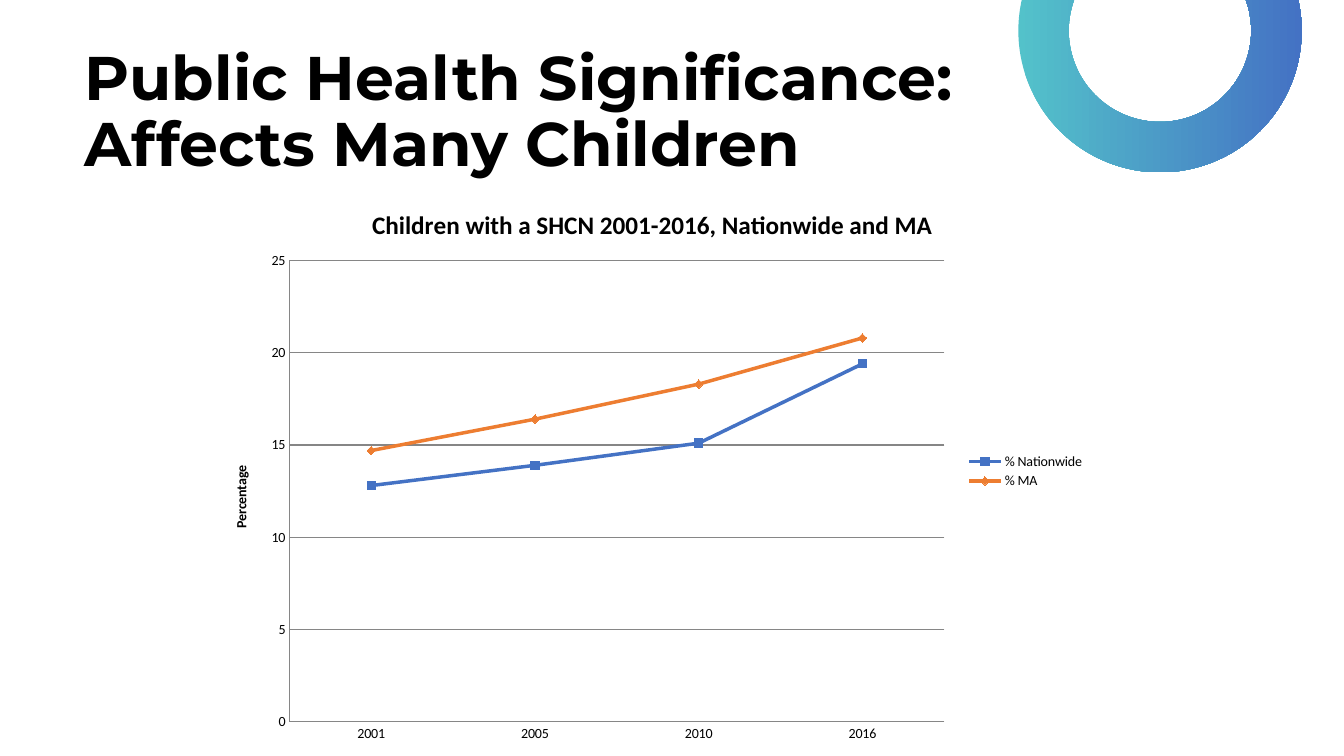
from lxml.etree import SubElement
from pptx import Presentation
from pptx.chart.data import CategoryChartData
from pptx.dml.color import RGBColor
from pptx.enum.chart import XL_CHART_TYPE, XL_LEGEND_POSITION, XL_MARKER_STYLE, XL_TICK_MARK
from pptx.enum.shapes import MSO_SHAPE
from pptx.enum.text import MSO_ANCHOR
from pptx.oxml.ns import qn
from pptx.util import Inches, Pt

BLACK, GRID = "000000", "868686"
TEAL, BLUE, ORANGE = "53C2CA", "4472C4", "ED7D31"
YEARS = ["2001", "2005", "2010", "2016"]
PREVALENCE = [
    ("% Nationwide", [12.8, 13.9, 15.1, 19.4], BLUE, XL_MARKER_STYLE.SQUARE),
    ("% MA", [14.7, 16.4, 18.3, 20.8], ORANGE, XL_MARKER_STYLE.DIAMOND),
]


def rgb(value):
    return RGBColor.from_string(value)


def set_font(font, size, name="Calibri", color=BLACK, bold=False):
    font.size, font.name, font.bold = Pt(size), name, bold
    font.color.rgb = rgb(color)


def write(frame, text, **style):
    paragraph = frame.paragraphs[0]
    run = paragraph.add_run()
    run.text = text
    set_font(run.font, **style)
    return paragraph


def add_ring(slide, left, top, size, thickness):
    ring = slide.shapes.add_shape(
        MSO_SHAPE.DONUT, Inches(left), Inches(top), Inches(size), Inches(size))
    ring.shadow.inherit = False
    ring.adjustments[0] = thickness / size
    ring.line.fill.background()
    ring.fill.gradient()
    ring.fill.gradient_angle = 0
    for stop, position, color in zip(ring.fill.gradient_stops, (0, 1), (TEAL, BLUE)):
        stop.position = position
        stop.color.rgb = rgb(color)


def add_heading(slide, left, top, width, height):
    heading = slide.shapes.add_textbox(
        Inches(left), Inches(top), Inches(width), Inches(height))
    frame = heading.text_frame
    frame.word_wrap = True
    frame.vertical_anchor = MSO_ANCHOR.MIDDLE
    paragraph = write(frame, "Public Health Significance: Affects Many Children",
                      size=44, name="Montserrat", bold=True)
    paragraph.line_spacing = 0.9


def place_plot(chart, **fractions):
    """Fix the inner plot area at fractions of the chart's size."""
    plot_area = chart.plots[0]._element.getparent()
    for layout in plot_area.findall(qn("c:layout")):
        plot_area.remove(layout)
    layout = SubElement(plot_area, qn("c:layout"))
    plot_area.insert(0, layout)
    manual = SubElement(layout, qn("c:manualLayout"))
    settings = {"layoutTarget": "inner", "xMode": "edge", "yMode": "edge", **fractions}
    for tag, value in settings.items():
        SubElement(manual, qn(f"c:{tag}")).set("val", str(value))


def style_axes(chart):
    for axis in (chart.category_axis, chart.value_axis):
        axis.major_tick_mark = axis.minor_tick_mark = XL_TICK_MARK.NONE
        axis.format.line.color.rgb = rgb(GRID)
        axis.format.line.width = Pt(0.75)
        set_font(axis.tick_labels.font, 10)
    values = chart.value_axis
    values.minimum_scale, values.maximum_scale, values.major_unit = 0, 25, 5
    values.has_major_gridlines = True
    values.major_gridlines.format.line.color.rgb = rgb(GRID)
    values.major_gridlines.format.line.width = Pt(0.75)
    write(values.axis_title.text_frame, "Percentage", size=10, bold=True)


def add_prevalence_chart(slide, left, top, width, height):
    data = CategoryChartData()
    data.categories = YEARS
    for name, values, _, _ in PREVALENCE:
        data.add_series(name, values)
    chart = slide.shapes.add_chart(
        XL_CHART_TYPE.LINE_MARKERS, Inches(left), Inches(top),
        Inches(width), Inches(height), data).chart
    set_font(chart.font, 10)
    chart.has_title = True
    write(chart.chart_title.text_frame,
          "Children with a SHCN 2001-2016, Nationwide and MA", size=18, bold=True)
    chart.chart_title.include_in_layout = False
    chart.has_legend = True
    chart.legend.position = XL_LEGEND_POSITION.RIGHT
    chart.legend.include_in_layout = False
    set_font(chart.legend.font, 10)
    plot = chart.plots[0]
    plot.vary_by_categories = False
    for series, (_, _, color, marker) in zip(plot.series, PREVALENCE):
        series.smooth = False
        series.format.line.color.rgb = rgb(color)
        series.format.line.width = Pt(2.5)
        series.marker.style, series.marker.size = marker, 6
        series.marker.format.fill.solid()
        series.marker.format.fill.fore_color.rgb = rgb(color)
        series.marker.format.line.color.rgb = rgb(color)
    style_axes(chart)
    place_plot(chart, x=0.09, y=0.13, w=0.74, h=0.81)


def main():
    deck = Presentation()
    deck.slide_width, deck.slide_height = Inches(13.33), Inches(7.5)
    slide = deck.slides.add_slide(deck.slide_layouts[6])
    add_ring(slide, 10.1, -1.1, 2.81, 0.5)
    add_heading(slide, 0.74, 0.4, 9.38, 1.45)
    add_prevalence_chart(slide, 2.08, 1.85, 8.78, 5.65)
    deck.save("out.pptx")


if __name__ == "__main__":
    main()
